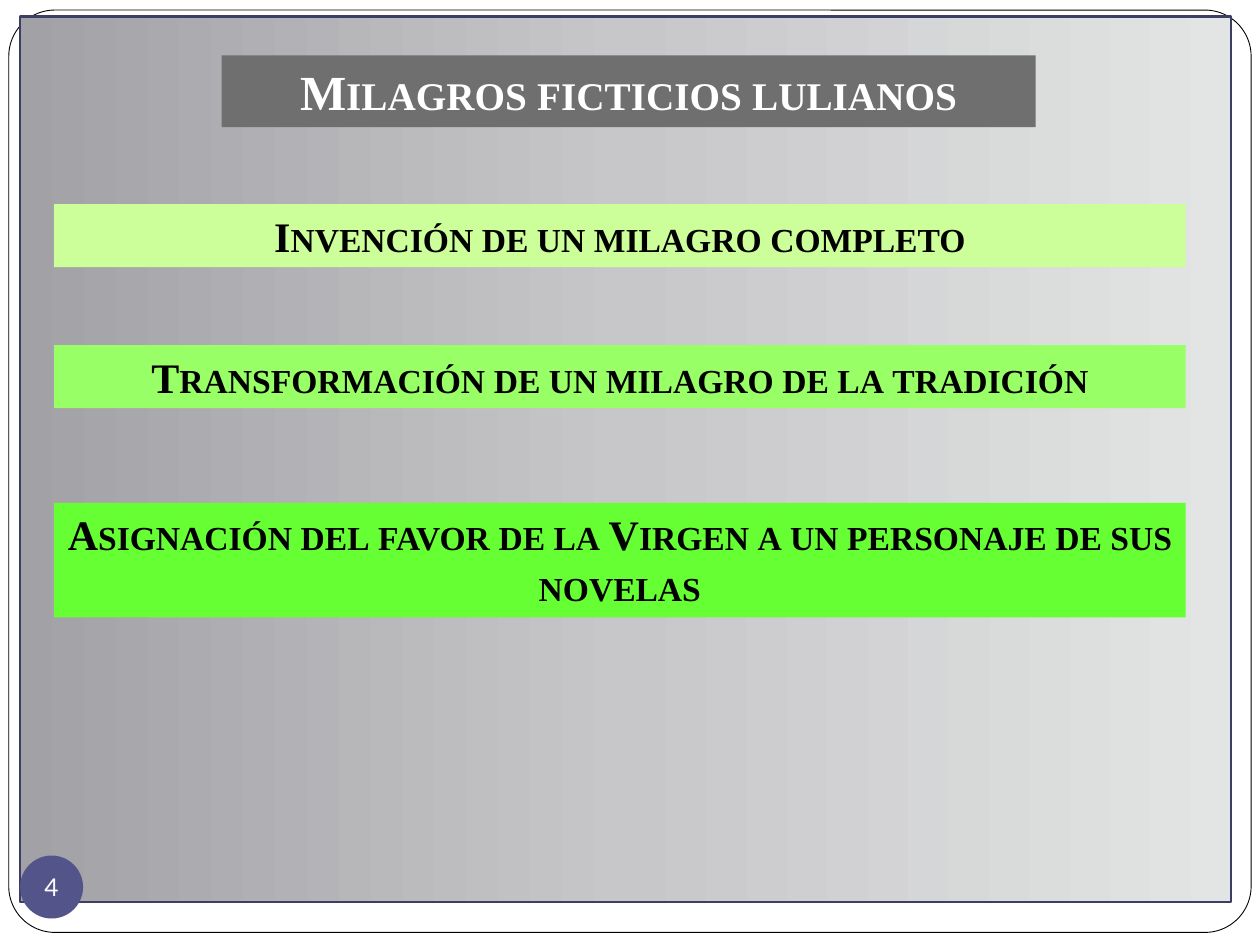
"""Builds the slide "Milagros ficticios lulianos"."""
from copy import deepcopy
from dataclasses import dataclass

from pptx import Presentation
from pptx.dml.color import RGBColor
from pptx.enum.shapes import MSO_SHAPE
from pptx.enum.text import MSO_ANCHOR, PP_ALIGN
from pptx.oxml.ns import qn
from pptx.util import Inches, Pt


@dataclass(frozen=True)
class Theme:
    paper: str = "FFFFFF"
    ink: str = "000000"
    edge: str = "3D3E66"
    badge: str = "53548A"
    heading: str = "6F6F6F"
    greens: tuple = ("CCFF99", "99FF66", "66FF33")
    greys: tuple = ("A2A2A6", "C7C7C9", "E3E4E4")
    serif: str = "Times New Roman"
    sans: str = "Lato"
    heading_size: int = 28
    body_size: int = 24
    number_size: int = 14


theme = Theme()
deck = Presentation()
deck.slide_width, deck.slide_height = Inches(10), Inches(7.5)
slide = deck.slides.add_slide(deck.slide_layouts[6])
grid_unit = deck.slide_width / 100


def add_panel(kind, box, fill=None, line=None, line_width=0):
    panel = slide.shapes.add_shape(kind, *(round(units * grid_unit) for units in box))
    panel.shadow.inherit = False
    if fill:
        panel.fill.solid()
        panel.fill.fore_color.rgb = RGBColor.from_string(fill)
    if line:
        panel.line.color.rgb = RGBColor.from_string(line)
        panel.line.width = Pt(line_width)
    else:
        panel.line.fill.background()
    return panel


def write(panel, words, size, color, font, small_caps=True):
    panel.text_frame.text = words
    paragraph = panel.text_frame.paragraphs[0]
    paragraph.alignment = PP_ALIGN.CENTER
    run = paragraph.runs[0]
    run.font.name, run.font.size = font, Pt(size)
    run.font.color.rgb = RGBColor.from_string(color)
    if small_caps:
        panel.text_frame.vertical_anchor = MSO_ANCHOR.TOP
        run.font.bold = True
        run._r.get_or_add_rPr().set("cap", "small")


frame = add_panel(MSO_SHAPE.ROUNDED_RECTANGLE, (0.7, 0.8, 98.6, 73.2),
                  theme.paper, theme.ink, 0.5)
frame.adjustments[0] = 0.05

backdrop = add_panel(MSO_SHAPE.RECTANGLE, (1.6, 1.3, 96.1, 70.3),
                     line=theme.edge, line_width=1.5)
backdrop.fill.gradient()
backdrop.fill.gradient_angle = 0
stop_list = backdrop._element.spPr.find(".//" + qn("a:gsLst"))
stop_list.append(deepcopy(stop_list[-1]))
for stop, grey, position in zip(backdrop.fill.gradient_stops, theme.greys, (0, 0.5, 1)):
    stop.color.rgb = RGBColor.from_string(grey)
    stop.position = position

page_badge = add_panel(MSO_SHAPE.OVAL, (1.6, 67.9, 5, 5), theme.badge)
badge_frame = page_badge.text_frame
badge_frame.margin_left = badge_frame.margin_right = 0
badge_frame.margin_top = badge_frame.margin_bottom = 0
badge_frame.word_wrap = False
write(page_badge, "4", theme.number_size, theme.paper, theme.sans, small_caps=False)

heading = add_panel(MSO_SHAPE.RECTANGLE, (17.6, 4.4, 64.6, 5.7), theme.heading)
write(heading, "Milagros ficticios lulianos", theme.heading_size, theme.paper, theme.serif)

miracle_types = (
    ("Invención de un milagro completo", 16.2, 5),
    ("Transformación de un milagro de la tradición", 27.4, 5),
    ("Asignación del favor de la Virgen a un personaje de sus novelas", 39.9, 9.1),
)
for (words, top, height), green in zip(miracle_types, theme.greens):
    band = add_panel(MSO_SHAPE.RECTANGLE, (4.3, top, 89.8, height), green)
    write(band, words, theme.body_size, theme.ink, theme.serif)

deck.save("out.pptx")
